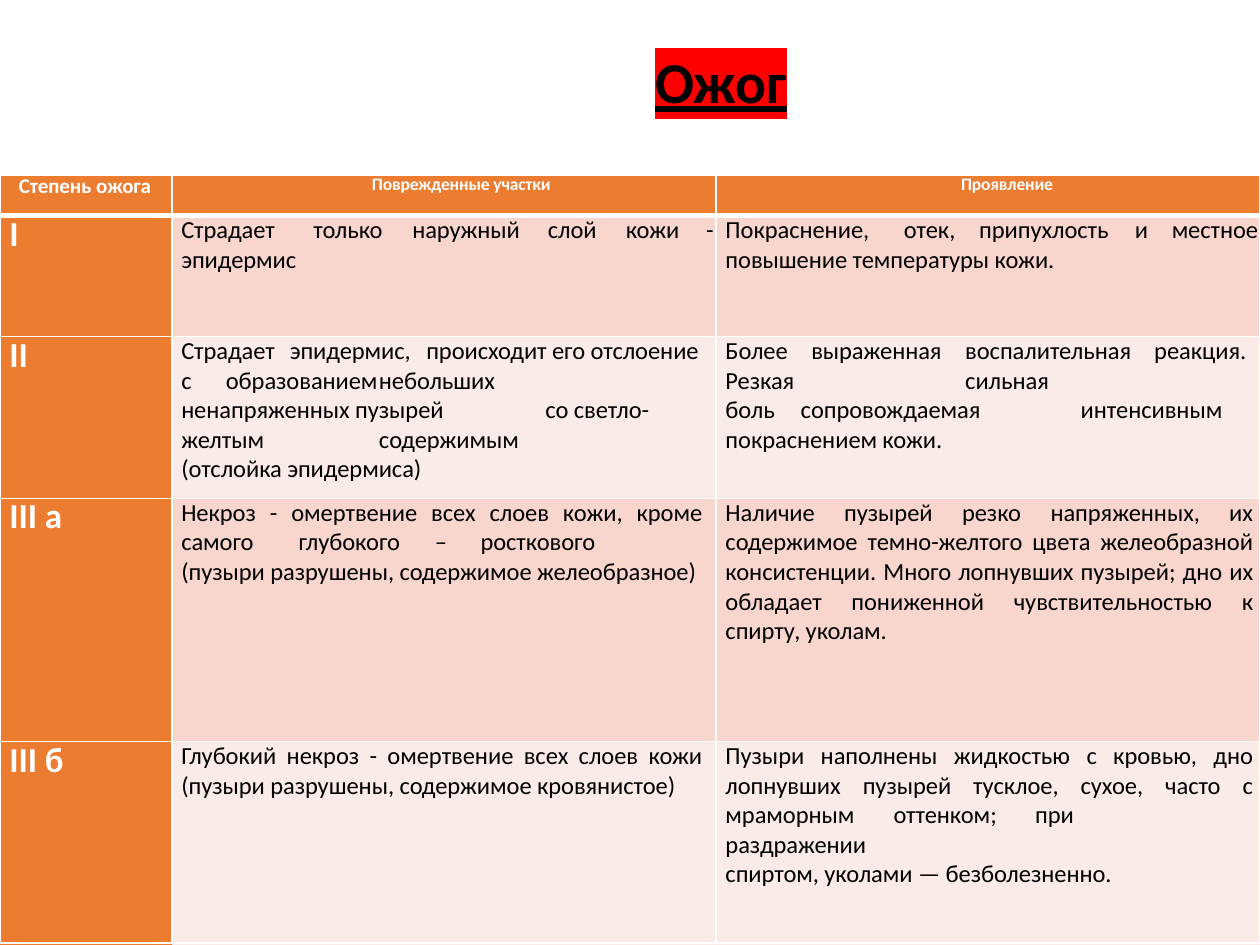
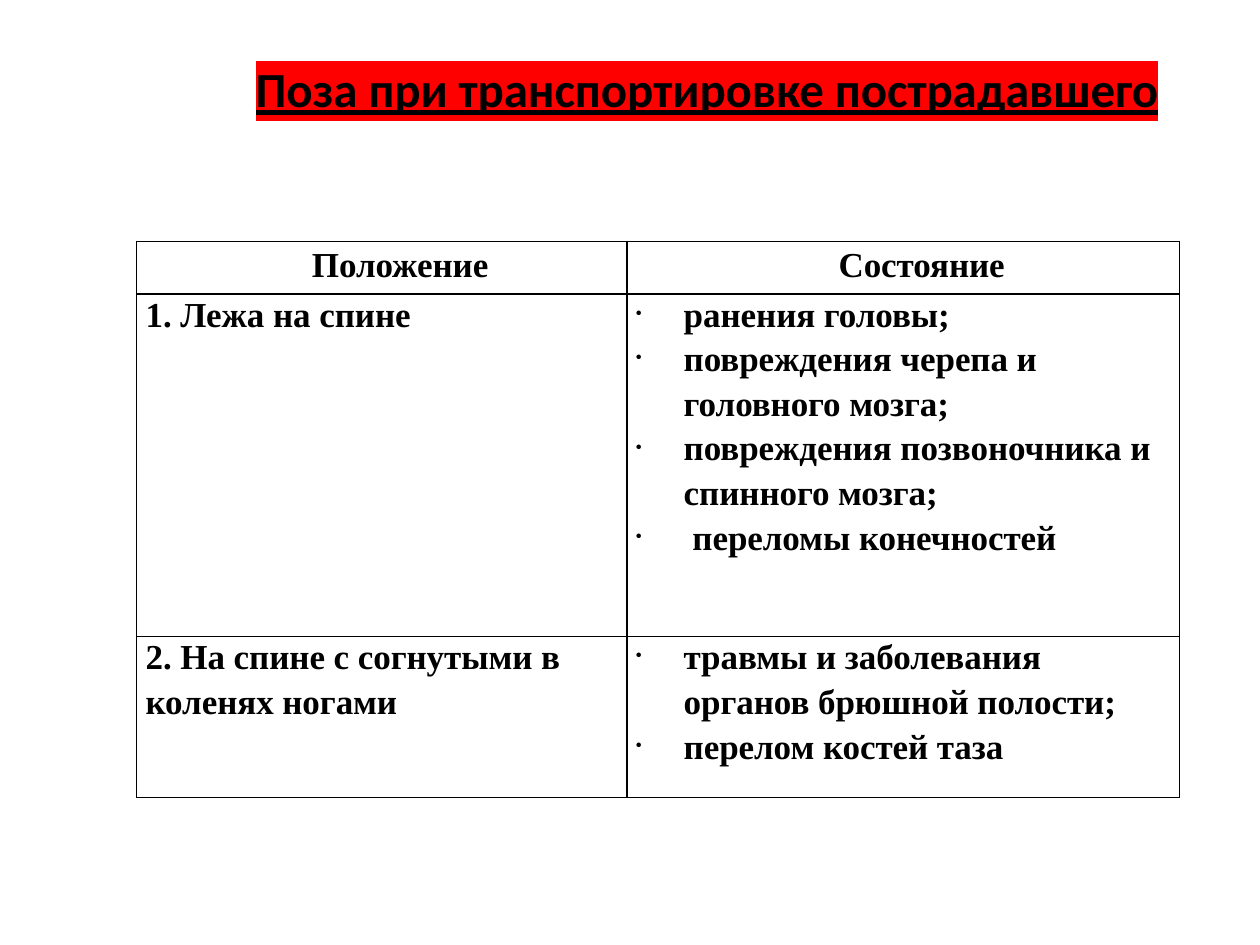
from lxml import etree
from pptx import Presentation
from pptx.dml.color import RGBColor
from pptx.enum import text
from pptx.oxml import ns
from pptx.util import Pt

COLORS = {"black": "000000", "white": "FFFFFF", "red": "FF0000",
          "orange": "EC7C30", "rose": "F8D6CD", "pale": "FBEBE8"}
CENTER, JUSTIFY = text.PP_ALIGN.CENTER, text.PP_ALIGN.JUSTIFY


def write(frame, paragraphs, size, color="black", bold=True, font="Calibri",
          highlight=None):
    """Fill a frame with (text, options) pairs; a newline is a line break."""
    frame.word_wrap = True
    for index, (words, options) in enumerate(paragraphs):
        paragraph = frame.paragraphs[0] if index == 0 else frame.add_paragraph()
        properties = paragraph._p.get_or_add_pPr()
        properties.set("marL", str(Pt(options.get("left", 0))))
        if "indent" in options:
            properties.set("indent", str(Pt(options["indent"])))
        if "bullet" in options:
            etree.SubElement(properties, ns.qn("a:buSzPct"), val="50000")
            etree.SubElement(properties, ns.qn("a:buChar"), char=options["bullet"])
        if "tabs" in options:
            stops = etree.SubElement(properties, ns.qn("a:tabLst"))
            for stop in options["tabs"]:
                etree.SubElement(stops, ns.qn("a:tab"), pos=str(Pt(stop)), algn="l")
        if "align" in options:
            paragraph.alignment = options["align"]
        if "line" in options:
            paragraph.line_spacing = options["line"]
        if "before" in options:
            paragraph.space_before = Pt(options["before"])
        for number, line in enumerate(words.split("\n")):
            if number:
                paragraph.add_line_break()
            run = paragraph.add_run()
            run.text = line
            run.font.size = Pt(size)
            run.font.bold = bold
            run.font.color.rgb = RGBColor.from_string(COLORS[color])
            run.font.name = font
            run_properties = run._r.get_or_add_rPr()
            run_properties.set("spc", "-5")
            if highlight:
                run.font.underline = True
                mark = etree.Element(ns.qn("a:highlight"))
                etree.SubElement(mark, ns.qn("a:srgbClr"), val=COLORS[highlight])
                run_properties.find(ns.qn("a:solidFill")).addnext(mark)


def prepare_cell(cell, border, fill=None, inset_top=0, inset_right=0, top=1, bottom=1):
    cell.margin_left, cell.margin_bottom = 0, 0
    cell.margin_top, cell.margin_right = Pt(inset_top), Pt(inset_right)
    properties = cell._tc.get_or_add_tcPr()
    for side, width in (("L", 1), ("R", 1), ("T", top), ("B", bottom)):
        line = etree.SubElement(properties, ns.qn(f"a:ln{side}"), w=str(Pt(width)))
        solid = etree.SubElement(line, ns.qn("a:solidFill"))
        etree.SubElement(solid, ns.qn("a:srgbClr"), val=COLORS[border])
    if fill:
        cell.fill.solid()
        cell.fill.fore_color.rgb = RGBColor.from_string(COLORS[fill])
    else:
        cell.fill.background()


degree = {"left": 5.3, "line": Pt(22.9)}
body = {"left": 5.3, "line": Pt(16.9)}
justified = {**body, "align": JUSTIFY}

burn_headers = [
    ("Степень ожога", 12, {"left": 10.8, "line": Pt(13.7)}),
    ("Поврежденные участки", 10, {"left": 114.3, "line": Pt(11.5)}),
    ("Проявление", 10, {"left": 21.6, "line": Pt(11.5), "align": CENTER}),
]
burn_degrees = [
    ("I",
     [("Страдает\tтолько\tнаружный\tслой\tкожи\t-",
       {**body, "tabs": (75.5, 132, 209.5, 254, 300)}),
      ("эпидермис", body)],
     [("Покраснение,\tотек,\tприпухлость\tи\tместное",
       {**body, "tabs": (102, 145, 234, 255)}),
      ("повышение температуры кожи.", body)]),
    ("II",
     [("Страдает\tэпидермис,\tпроисходит его отслоение", {**body, "tabs": (62, 140)}),
      ("с\tобразованием\tнебольших\nненапряженных пузырей\tсо светло-\n"
       "желтым\tсодержимым\n(отслойка эпидермиса)",
       {**body, "tabs": (25.5, 113, 208)})],
     [("Более\tвыраженная\tвоспалительная\tреакция.",
       {**body, "tabs": (49, 137, 245)}),
      ("Резкая\tсильная", {**body, "tabs": (137,)}),
      ("боль\tсопровождаемая\tинтенсивным\nпокраснением кожи.",
       {**body, "tabs": (43, 203)})]),
    ("III а",
     [("Некроз - омертвение всех слоев кожи, кроме самого\tглубокого\t–\tросткового",
       {**justified, "tabs": (67, 145, 171)}),
      ("(пузыри разрушены, содержимое желеобразное)", body)],
     [("Наличие пузырей резко напряженных, их содержимое темно-желтого цвета "
       "желеобразной консистенции. Много лопнувших пузырей; дно их обладает "
       "пониженной чувствительностью к спирту, уколам.", justified)]),
    ("III б",
     [("Глубокий некроз - омертвение всех слоев кожи (пузыри разрушены, "
       "содержимое кровянистое)", justified)],
     [("Пузыри наполнены жидкостью с кровью, дно лопнувших пузырей тусклое, "
       "сухое, часто с мраморным\tоттенком;\tпри\tраздражении\n"
       "спиртом, уколами — безболезненно.",
       {**justified, "tabs": (96, 177, 221)})]),
]

bullet = {"left": 32.4, "indent": -27.4, "bullet": "•"}
wrapped = {**bullet, "line": 1.15}
position = {"left": 5.2}
poses = [
    ([("1. Лежа на спине", position)],
     [("ранения головы;", bullet),
      ("повреждения черепа и головного мозга;", wrapped),
      ("повреждения позвоночника и спинного мозга;", wrapped),
      ("переломы конечностей",
       {**bullet, "left": 37.4, "indent": -32.4, "before": 3.6})]),
    ([("2. На спине с согнутыми в", position),
      ("коленях ногами", {**position, "before": 3.6})],
     [("травмы и заболевания", bullet),
      ("органов брюшной полости;", {"left": 32.4, "before": 3.6}),
      ("перелом костей таза", {**bullet, "before": 3.6})]),
]

presentation = Presentation()
presentation.slide_width, presentation.slide_height = Pt(720), Pt(540)
blank = presentation.slide_layouts[6]

# Titles: words, size, left, top, width, height, top inset, paragraph indent
slides = []
for words, size, left, top, width, height, inset, indent in (
        ("Ожог", 33, 134, 12, 551, 54, 14, 5),
        ("Поза при транспортировке пострадавшего", 28, 78, 30, 615, 38, 3.5, 36.7)):
    slide = presentation.slides.add_slide(blank)
    frame = slide.shapes.add_textbox(Pt(left), Pt(top), Pt(width), Pt(height)).text_frame
    frame.margin_left = frame.margin_right = frame.margin_bottom = 0
    frame.margin_top = Pt(inset)
    write(frame, [(words, {"left": indent, "align": CENTER})], size, highlight="red")
    slides.append(slide)
burn_slide, pose_slide = slides

# Colour panels behind the burn table
for color, boxes in (("orange", [(0, 193, 98.5, 540), (0, 124, 98.5, 193)]),
                     ("pale", [(98.5, 424, 409, 540), (409, 424, 720, 540)])):
    outline = None
    for left, top, right, bottom in boxes:
        if outline is None:
            outline = burn_slide.shapes.build_freeform(Pt(left), Pt(top))
        else:
            outline.move_to(Pt(left), Pt(top))
        corners = [(right, top), (right, bottom), (left, bottom)]
        outline.add_line_segments([(Pt(x), Pt(y)) for x, y in corners], close=True)
    panel = outline.convert_to_shape()
    panel.shadow.inherit = False
    panel.fill.solid()
    panel.fill.fore_color.rgb = RGBColor.from_string(COLORS[color])
    panel.line.fill.background()

# Burn degrees
burns = burn_slide.shapes.add_table(5, 3, 0, Pt(100.3), Pt(720), Pt(438.5)).table
for column, width in zip(burns.columns, (98.3, 311, 310.7)):
    column.width = Pt(width)
for row, height in zip(burns.rows, (23, 69, 92.5, 139, 115)):
    row.height = Pt(height)
for column, (words, size, options) in enumerate(burn_headers):
    cell = burns.cell(0, column)
    prepare_cell(cell, "white", "orange", bottom=3)
    write(cell.text_frame, [(words, options)], size, "white")
for row, (name, damage, signs) in enumerate(burn_degrees, 1):
    border_top = 3 if row == 1 else 1
    cell = burns.cell(row, 0)
    prepare_cell(cell, "white", "orange", top=border_top)
    write(cell.text_frame, [(name, degree)], 20, "white")
    tint = "rose" if row % 2 else "pale"
    for column, paragraphs, inset in ((1, damage, 8), (2, signs, 4)):
        cell = burns.cell(row, column)
        prepare_cell(cell, "white", tint, inset_right=inset if row > 2 else 0,
                     top=border_top)
        write(cell.text_frame, paragraphs, 14, bold=False)

# Transport positions
transport = pose_slide.shapes.add_table(3, 2, Pt(78), Pt(138), Pt(596), Pt(318)).table
for column, width in zip(transport.columns, (280.3, 315.7)):
    column.width = Pt(width)
for row, height in zip(transport.rows, (30, 195.7, 92)):
    row.height = Pt(height)
pose_header = {"left": 21, "align": CENTER}
pose_rows = [([("Положение", pose_header)], [("Состояние", pose_header)])] + poses
for row, contents in enumerate(pose_rows):
    for column, paragraphs in enumerate(contents):
        cell = transport.cell(row, column)
        prepare_cell(cell, "black", inset_top=1 if row else 2.5)
        write(cell.text_frame, paragraphs, 20, font="Times New Roman")

presentation.save("out.pptx")
